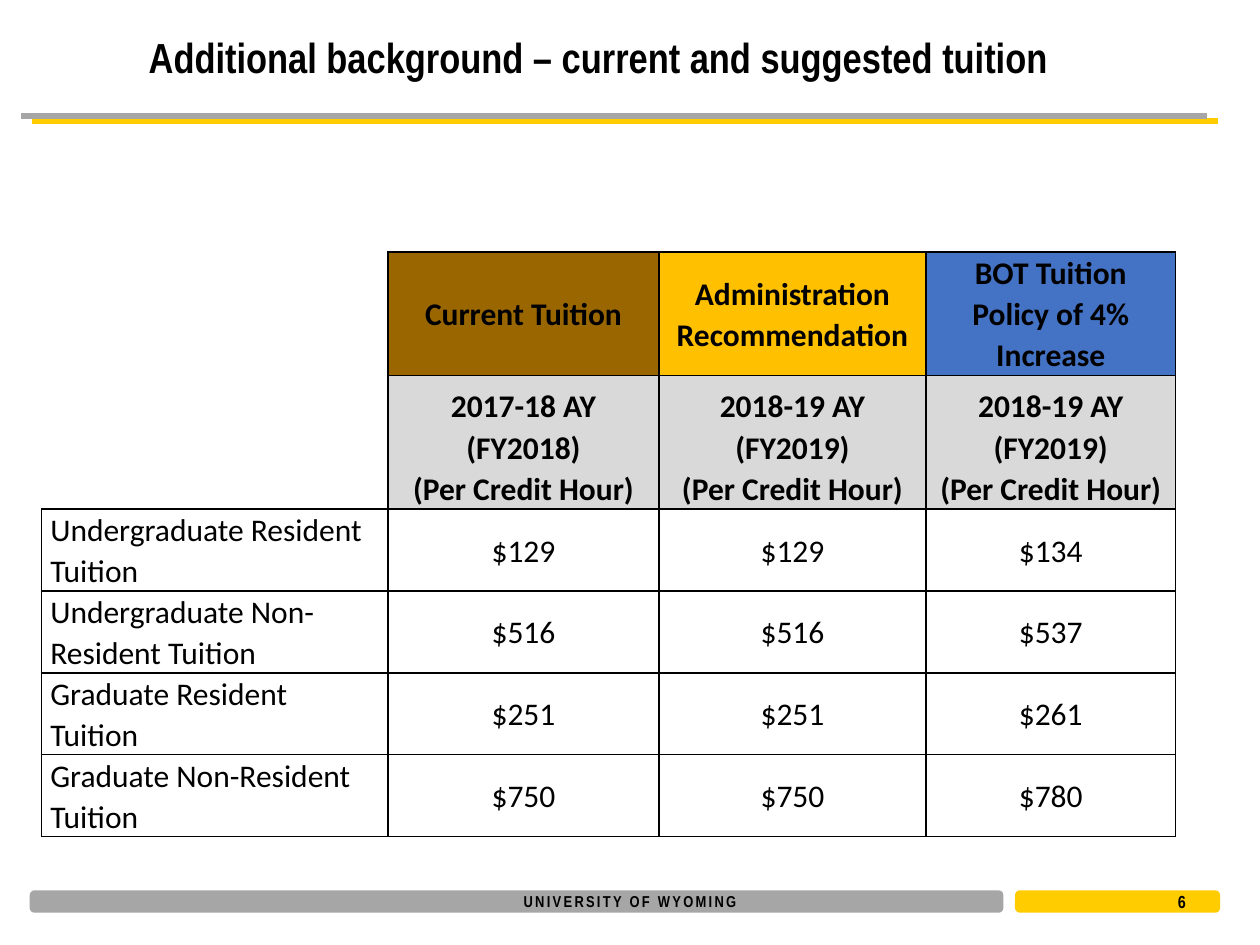
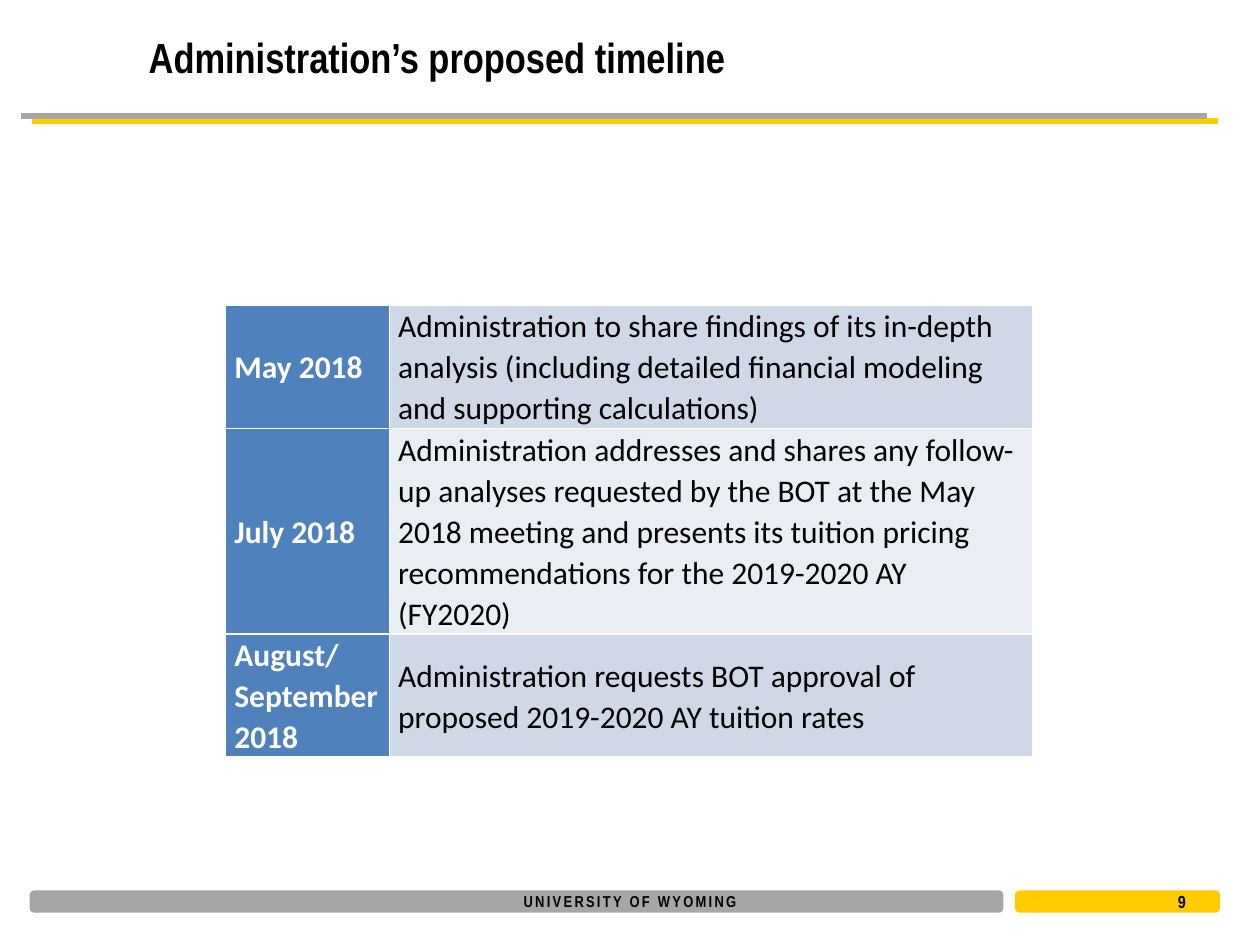
from lxml import etree
from pptx import Presentation
from pptx import util as u
from pptx.dml.color import RGBColor
from pptx.enum import shapes, text
from pptx.oxml.ns import qn

BLACK, WHITE, GREY, GOLD = "000000", "FFFFFF", "A6A6A6", "FFCC00"
ALIGN = {"l": text.PP_ALIGN.LEFT, "c": text.PP_ALIGN.CENTER}
ANCHOR = {"m": text.MSO_ANCHOR.MIDDLE, "b": text.MSO_ANCHOR.BOTTOM}


def rgb(value):
    return RGBColor.from_string(value)


def inches(*values):
    return [u.Inches(v) for v in values]


def write(tf, content, size=18, font="Calibri", color=BLACK, bold=False,
          align="l", spacing=None, tracking=None):
    for i, line in enumerate(content.split("\n")):
        p = tf.add_paragraph() if i else tf.paragraphs[0]
        p.alignment = ALIGN[align]
        p.line_spacing = spacing
        r = p.add_run()
        r.text = line
        r.font.size, r.font.name, r.font.bold = u.Pt(size), font, bold
        r.font.color.rgb = rgb(color)
        if tracking:
            r._r.get_or_add_rPr().set("spc", str(round(tracking * 100)))


class Deck:
    def __init__(self):
        self.prs = Presentation()
        self.prs.slide_width, self.prs.slide_height = inches(10, 7.5)
        self.head = dict(font="Arial Narrow", bold=True)
        self.s = None

    def slide(self, title, number):
        self.s = self.prs.slides.add_slide(self.prs.slide_layouts[5])
        self.line(0.25, 9.67, 0.96, GOLD)
        self.line(0.17, 9.58, 0.92, GREY)
        self.bar(0.25, 7.7, GREY)
        self.bar(8.07, 1.6, GOLD)
        self.label(3.9, 7.03, 2.2, 0.25, "UNIVERSITY OF WYOMING",
                   size=9, align="c", tracking=1.3)
        self.label(9.25, 7.06, 0.5, 0.19, str(number), size=10)
        sp = self.s.shapes.title
        sp.left, sp.top, sp.width, sp.height = inches(1.08, 0.15, 8.75, 0.6)
        tf = sp.text_frame
        tf.vertical_anchor = ANCHOR["m"]
        write(tf, title, size=24, **self.head)

    def line(self, left, right, y, color):
        sp = self.s.shapes.add_connector(shapes.MSO_CONNECTOR.STRAIGHT, *inches(left, y, right, y))
        sp.line.color.rgb = rgb(color)
        sp.line.width = u.Pt(3)
        etree.SubElement(sp._element.spPr, qn("a:effectLst"))

    def bar(self, left, width, color):
        sp = self.s.shapes.add_shape(shapes.MSO_SHAPE.ROUNDED_RECTANGLE,
                                     *inches(left, 7.08, width, 0.15))
        sp.shadow.inherit = False
        sp.fill.solid()
        sp.fill.fore_color.rgb = sp.line.color.rgb = rgb(color)
        sp.line.width = u.Pt(2)

    def label(self, left, top, width, height, content, **fmt):
        tf = self.s.shapes.add_textbox(*inches(left, top, width, height)).text_frame
        tf.word_wrap = True
        tf.vertical_anchor = ANCHOR["m"]
        write(tf, content, **self.head, **fmt)

    def table(self, left, top, widths, heights):
        frame = self.s.shapes.add_table(len(heights), len(widths),
                                        *inches(left, top, sum(widths), sum(heights)))
        table = frame.table
        table.first_row = table.horz_banding = False
        for col, width in zip(table.columns, widths):
            col.width = u.Inches(width)
        for row, height in zip(table.rows, heights):
            row.height = u.Inches(height)
        return table

    def cell(self, cell, content, fill=None, border=BLACK, sides="LRTB", anchor="m", **fmt):
        cell.margin_left = cell.margin_right = u.Inches(0.07)
        cell.margin_top = cell.margin_bottom = 0
        cell.vertical_anchor = ANCHOR[anchor]
        tcPr = cell._tc.get_or_add_tcPr()
        for side in "LRTB":
            ln = etree.SubElement(tcPr, qn("a:ln" + side), w=str(u.Pt(1)))
            if side in sides:
                solid = etree.SubElement(ln, qn("a:solidFill"))
                etree.SubElement(solid, qn("a:srgbClr"), val=border)
            else:
                etree.SubElement(ln, qn("a:noFill"))
        if fill:
            cell.fill.solid()
            cell.fill.fore_color.rgb = rgb(fill)
        else:
            cell.fill.background()
        if content:
            write(cell.text_frame, content, spacing=1.07, **fmt)


def tuition_slide(deck):
    deck.slide("Additional background – current and suggested tuition", 6)
    plans = [("Current Tuition", "996600", "2017-18 AY\n(FY2018)"),
             ("Administration Recommendation", "FFC000", "2018-19 AY\n(FY2019)"),
             ("BOT Tuition Policy of 4% Increase", "4472C4", "2018-19 AY\n(FY2019)")]
    rates = [("Undergraduate Resident Tuition", "$129", "$129", "$134"),
             ("Undergraduate Non-Resident Tuition", "$516", "$516", "$537"),
             ("Graduate Resident Tuition", "$251", "$251", "$261"),
             ("Graduate Non-Resident Tuition", "$750", "$750", "$780")]
    table = deck.table(0.33, 2, [2.75, 2.15, 2.12, 1.98], [0.98, 0.73, 0.33] + [0.65] * 4)
    for row, sides in enumerate(["R", "R", "RB"]):
        deck.cell(table.cell(row, 0), "", sides=sides)
    bold = dict(bold=True, align="c")
    for col, (plan, color, year) in enumerate(plans, 1):
        deck.cell(table.cell(0, col), plan, color, **bold)
        deck.cell(table.cell(1, col), year, "D9D9D9", sides="LRT", anchor="b", **bold)
        deck.cell(table.cell(2, col), "(Per Credit Hour)", "D9D9D9", sides="LRB", **bold)
    for row, values in enumerate(rates, 3):
        for col, value in enumerate(values):
            deck.cell(table.cell(row, col), value, align="c" if col else "l")


def timeline_slide(deck):
    deck.slide("Administration’s proposed timeline", 9)
    steps = [("May 2018", "Administration to share findings of its in-depth analysis "
              "(including detailed financial modeling and supporting calculations)"),
             ("July 2018", "Administration addresses and shares any follow-up analyses "
              "requested by the BOT at the May 2018 meeting and presents its tuition "
              "pricing recommendations for the 2019-2020 AY (FY2020)"),
             ("August/ September 2018", "Administration requests BOT approval of "
              "proposed 2019-2020 AY tuition rates")]
    table = deck.table(1.79, 2.42, [1.3, 5.11], [0.98, 1.63, 0.98])
    for row, (date, step) in enumerate(steps):
        deck.cell(table.cell(row, 0), date, "4F81BD", WHITE, color=WHITE, bold=True)
        deck.cell(table.cell(row, 1), step, "E9EDF4" if row % 2 else "D0D8E8", WHITE)


def main():
    deck = Deck()
    tuition_slide(deck)
    timeline_slide(deck)
    deck.prs.save("out.pptx")


if __name__ == "__main__":
    main()
